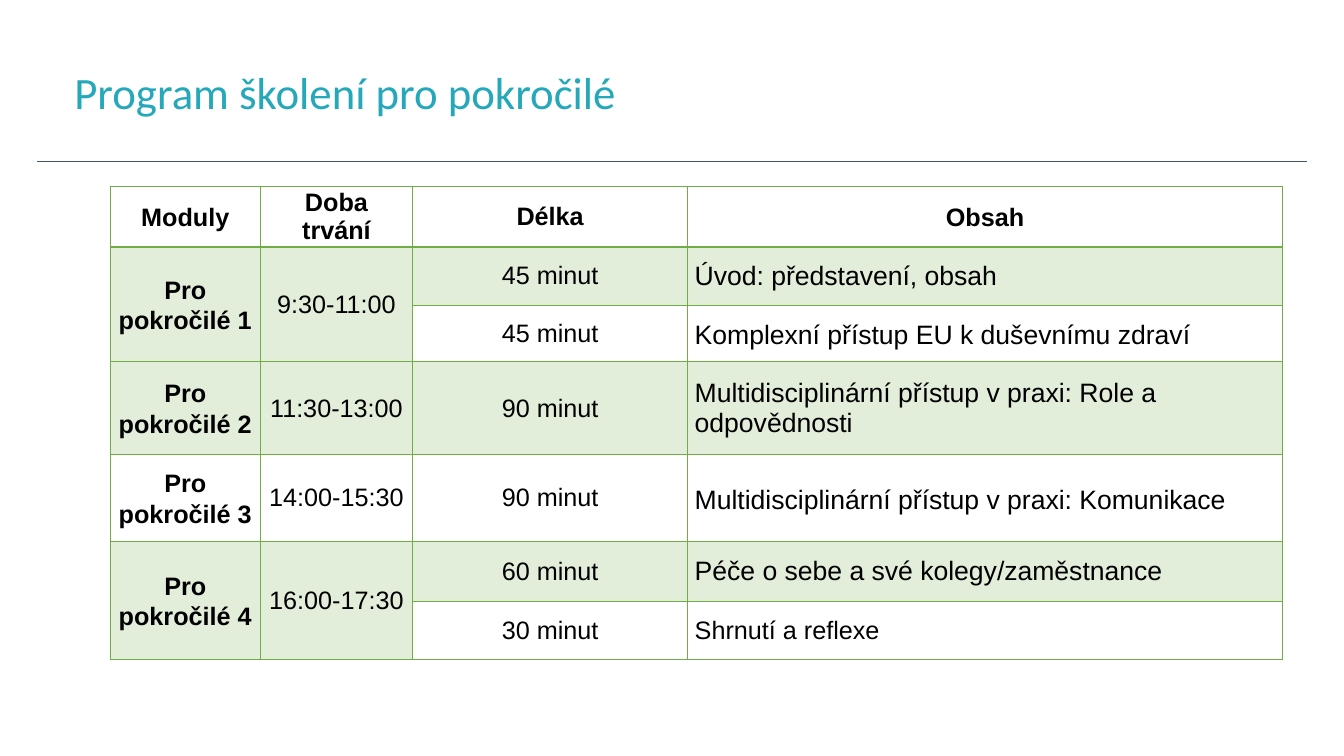
import pptx
import pptx.util
import pptx.dml.color
import pptx.enum.shapes
import pptx.enum.text
import pptx.oxml
import pptx.oxml.ns
import lxml.etree

Pt = pptx.util.Pt
ALIGN = pptx.enum.text.PP_ALIGN
MIDDLE = pptx.enum.text.MSO_ANCHOR.MIDDLE
COLOURS = {"title": "25A8BA", "rule": "44546A", "green": "70AD47", "text": "000000"}

HEADERS = ["Moduly", "Doba trvání", "Délka", "Obsah"]
MODULES = [
    ("Pro pokročilé 1", "9:30-11:00", [
        ("45 minut", "Úvod: představení, obsah", 19, 1),
        ("45 minut", "Komplexní přístup EU k duševnímu zdraví", 19, 1.15)]),
    ("Pro pokročilé 2", "11:30-13:00", [
        ("90 minut", "Multidisciplinární přístup v praxi: Role a odpovědnosti", 19, 1)]),
    ("Pro pokročilé 3", "14:00-15:30", [
        ("90 minut", "Multidisciplinární přístup v praxi: Komunikace", 19, 1.15)]),
    ("Pro pokročilé 4", "16:00-17:30", [
        ("60 minut", "Péče o sebe a své kolegy/zaměstnance", 19, 1),
        ("30 minut", "Shrnutí a reflexe", 18, 1)]),
]
COLUMN_WIDTHS = [107.3, 108.7, 196.6, 424.8]
ROW_HEIGHTS = [40.5, 41.5, 40.5, 66.5, 62, 43, 41.5]


def colour(name):
    """Return a named colour from the palette."""
    return pptx.dml.color.RGBColor.from_string(COLOURS[name])


def style_paragraph(para, font_name, size, colour_name, spacing, bold=False):
    """Set the font and line spacing of a paragraph."""
    para.line_spacing = spacing
    para.font.name = font_name
    para.font.size = Pt(size)
    para.font.bold = bold
    para.font.color.rgb = colour(colour_name)


def add_heading(page, left, top, width, height):
    """Add the title and the rule that runs below it."""
    box = page.shapes.add_textbox(Pt(left), Pt(top), Pt(width), Pt(height))
    frame = box.text_frame
    frame.word_wrap = True
    frame.vertical_anchor = MIDDLE
    frame.text = "Program školení pro pokročilé"
    style_paragraph(frame.paragraphs[0], "Calibri", 32, "title", 0.9)
    rule_left, rule_top = left - 19.4, top + height + 9.3
    rule = page.shapes.add_connector(
        pptx.enum.shapes.MSO_CONNECTOR.STRAIGHT,
        Pt(rule_left), Pt(rule_top), Pt(rule_left + 907), Pt(rule_top))
    rule.line.color.rgb = colour("rule")
    rule.line.width = Pt(0.75)
    lxml.etree.SubElement(rule._element.spPr, pptx.oxml.ns.qn("a:effectLst"))


def style_cell(cell, shaded, bottom_width):
    """Set the margins, borders and fill of a cell."""
    cell.margin_left = cell.margin_right = Pt(5)
    cell.margin_top = cell.margin_bottom = 0
    cell.vertical_anchor = MIDDLE
    properties = cell._tc.get_or_add_tcPr()
    for side in "LRTB":
        width = Pt(bottom_width if side == "B" else 1)
        properties.append(pptx.oxml.parse_xml(
            f'<a:ln{side} {pptx.oxml.ns.nsdecls("a")} w="{width}"><a:solidFill>'
            f'<a:srgbClr val="{COLOURS["green"]}"/></a:solidFill></a:ln{side}>'))
    if shaded:
        cell.fill.solid()
        cell.fill.fore_color.rgb = colour("green")
        tint = properties.find("a:solidFill/a:srgbClr", properties.nsmap)
        lxml.etree.SubElement(tint, pptx.oxml.ns.qn("a:alpha"), val="20000")
    else:
        cell.fill.background()


def write_cell(cell, text, size=18, spacing=1, bold=False, align=ALIGN.CENTER):
    """Write one line of text into a cell."""
    cell.text = text
    para = cell.text_frame.paragraphs[0]
    para.alignment = align
    style_paragraph(para, "Arial", size, "text", spacing, bold)


def add_programme(page, left, top):
    """Add the programme table with one block of rows per module."""
    table = page.shapes.add_table(
        len(ROW_HEIGHTS), len(COLUMN_WIDTHS), Pt(left), Pt(top),
        Pt(sum(COLUMN_WIDTHS)), Pt(sum(ROW_HEIGHTS))).table
    table.first_row = table.horz_banding = False
    for column, width in zip(table.columns, COLUMN_WIDTHS):
        column.width = Pt(width)
    for row, height in zip(table.rows, ROW_HEIGHTS):
        row.height = Pt(height)

    for index, header in enumerate(HEADERS):
        cell = table.cell(0, index)
        style_cell(cell, False, 2)
        write_cell(cell, header, spacing=1.07 if index in (0, 3) else 1, bold=True)

    first = 1
    for module, hours, sessions in MODULES:
        last = first + len(sessions) - 1
        for row, (length, topic, size, spacing) in enumerate(sessions, first):
            for index in range(len(HEADERS)):
                shaded_row = first if index < 2 else row
                style_cell(table.cell(row, index), shaded_row in (1, 3, 5), 1)
            write_cell(table.cell(row, 2), length)
            write_cell(table.cell(row, 3), topic, size, spacing, align=ALIGN.LEFT)
        write_cell(table.cell(first, 0), module, spacing=1.07, bold=True)
        write_cell(table.cell(first, 1), hours)
        if last > first:
            for index in range(2):
                table.cell(first, index).merge(table.cell(last, index))
        first = last + 1


def main():
    """Build and save the deck."""
    deck = pptx.Presentation()
    deck.slide_width, deck.slide_height = Pt(960), Pt(540)
    page = deck.slides.add_slide(deck.slide_layouts[6])
    add_heading(page, 46, 30.2, 732, 75.6)
    add_programme(page, 78.7, 133.2)
    deck.save("out.pptx")


if __name__ == "__main__":
    main()
